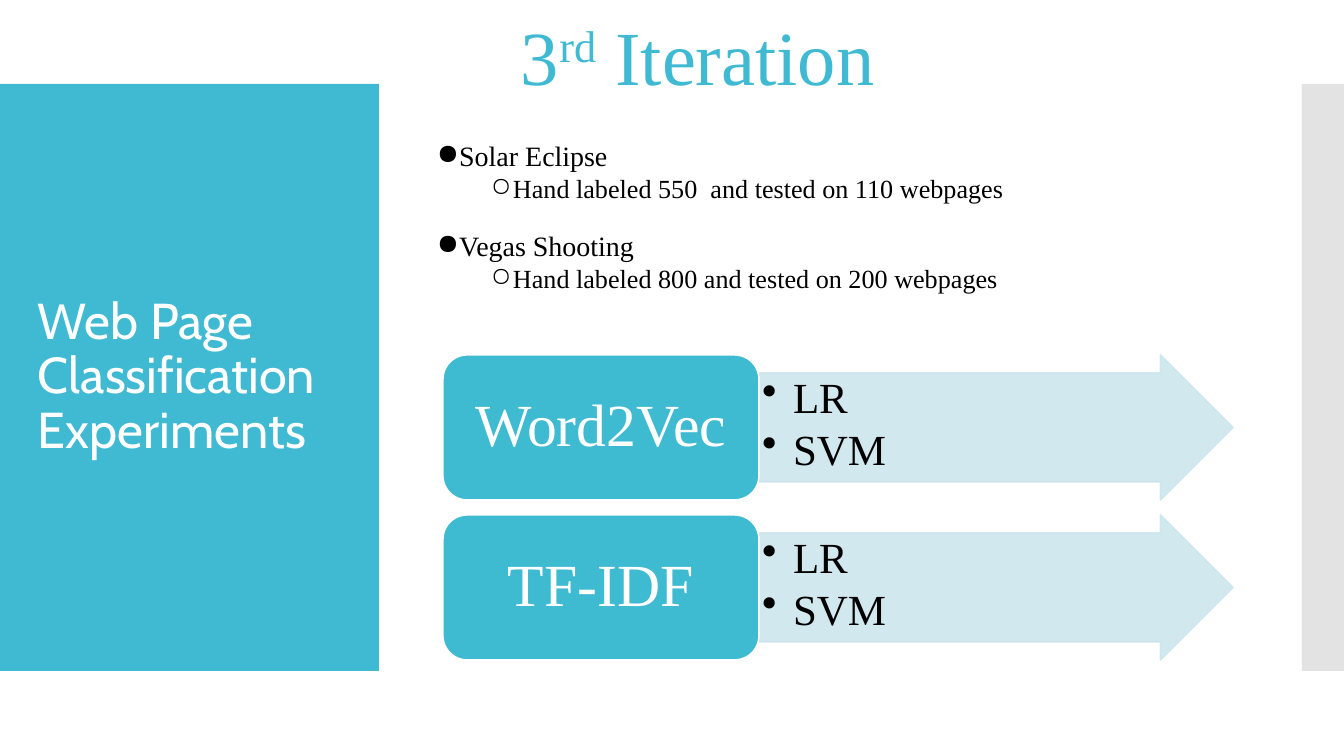
import lxml.etree
import pptx
import pptx.dml.color
import pptx.enum.shapes
import pptx.enum.text
import pptx.oxml.ns
import pptx.util

PIXEL = 914400 / 134.4  # EMU in one px
THEME = {
    "accent": "40BAD2", "label": "3EBAD1", "arrow": "CDE6ED", "strip": "C8C8C8",
    "white": "FFFFFF", "black": "000000",
    "sans": "Cabin", "serif": "Times New Roman",
    "heading": 41, "title": 27, "method": 32, "model": 23, "topic": 15, "detail": 14,
}
qn = pptx.oxml.ns.qn
Shape = pptx.enum.shapes.MSO_SHAPE
Align = pptx.enum.text.PP_ALIGN
Anchor = pptx.enum.text.MSO_ANCHOR


def add_box(slide, kind, place, fill=None, line=None, opacity=100):
    """Add a shape, or a text box when kind is None, placed in px."""
    lengths = [round(value * PIXEL) for value in place]
    if kind is None:
        return slide.shapes.add_textbox(*lengths)
    shape = slide.shapes.add_shape(kind, *lengths)
    shape.shadow.inherit = False
    shape.fill.solid()
    shape.fill.fore_color.rgb = pptx.dml.color.RGBColor.from_string(THEME[fill])
    if line:
        shape.line.color.rgb = pptx.dml.color.RGBColor.from_string(THEME[line])
        shape.line.width = pptx.util.Pt(0.85)
    else:
        shape.line.fill.background()
    if opacity < 100:
        for color in shape._element.spPr.iter(qn("a:srgbClr")):
            lxml.etree.SubElement(color, qn("a:alpha"), val=str(opacity * 1000))
    return shape


def write_text(shape, paragraphs, font, color, insets, anchor=Anchor.TOP):
    """Write (text, size, format values, bullet) paragraphs; insets are in px."""
    frame = shape.text_frame
    across, down = (round(value * PIXEL) for value in insets)
    frame_format = {
        "word_wrap": True, "vertical_anchor": anchor,
        "margin_left": across, "margin_right": across,
        "margin_top": down, "margin_bottom": down,
    }
    for name, value in frame_format.items():
        setattr(frame, name, value)
    for index, (text, size, values, bullet) in enumerate(paragraphs):
        paragraph = frame.add_paragraph() if index else frame.paragraphs[0]
        if bullet:
            symbol, left, hanging = bullet
            properties = paragraph._p.get_or_add_pPr()
            properties.set("marL", str(round(left * PIXEL)))
            properties.set("indent", str(round(-hanging * PIXEL)))
            bullet_color = lxml.etree.SubElement(properties, qn("a:buClr"))
            lxml.etree.SubElement(bullet_color, qn("a:srgbClr"), val=THEME[color])
            lxml.etree.SubElement(properties, qn("a:buChar"), char=symbol)
        paragraph_format = {"alignment": Align.LEFT, "line_spacing": 0.9, **values}
        for name, value in paragraph_format.items():
            setattr(paragraph, name, value)
        # A text is one string, or a list of (string, baseline shift) parts
        for part, shift in [(text, 0)] if isinstance(text, str) else text:
            run = paragraph.add_run()
            run.text = part
            font_format = {"name": THEME[font], "size": pptx.util.Pt(THEME[size])}
            for name, value in font_format.items():
                setattr(run.font, name, value)
            run.font.color.rgb = pptx.dml.color.RGBColor.from_string(THEME[color])
            if shift:
                run._r.get_or_add_rPr().set("baseline", str(shift * 1000))


presentation = pptx.Presentation()
presentation.slide_width = round(1344 * PIXEL)
presentation.slide_height = round(756 * PIXEL)
slide = presentation.slides.add_slide(presentation.slide_layouts[6])

# Side panel and right strip
add_box(slide, Shape.RECTANGLE, (0, 84, 379, 587), "accent")
add_box(slide, Shape.RECTANGLE, (1302, 84, 42, 587), "strip", opacity=50)

# Panel title
title = add_box(slide, None, (28, 124, 325, 507))
write_text(title, [("Web Page Classification Experiments", "title", {}, None)],
           "sans", "white", (10, 5), Anchor.MIDDLE)

# Heading
heading = add_box(slide, None, (431, 4, 534, 102))
write_text(heading, [([("3", 0), ("rd", 30), (" Iteration", 0)], "heading",
                      {"alignment": Align.CENTER, "line_spacing": 1.0}, None)],
           "serif", "accent", (10, 5))

# Data sets
topics = [
    ("Solar Eclipse", "Hand labeled 550  and tested on 110 webpages"),
    ("Vegas Shooting", "Hand labeled 800 and tested on 200 webpages"),
]
lines = []
for index, (topic, detail) in enumerate(topics):
    gap = {"space_before": pptx.util.Pt(15)} if index else {}
    lines.append((topic, "topic", gap, ("●", 20, 20)))
    lines.append((detail, "detail", {"level": 1, "space_before": pptx.util.Pt(2)},
                  ("○", 76, 22)))
data_sets = add_box(slide, None, (427, 137, 806, 168))
write_text(data_sets, lines, "serif", "black", (10, 5))

# Methods with their models
for row, method in enumerate(["Word2Vec", "TF-IDF"]):
    top = 355 + 160 * row
    arrow = add_box(slide, Shape.RIGHT_ARROW, (758, top, 475, 145),
                    "arrow", "arrow", opacity=90)
    arrow.adjustments[0] = 0.75
    models = [
        (model, "model", {"level": 1, "space_before": pptx.util.Pt(3 * index)},
         ("•", 32, 31))
        for index, model in enumerate(["LR", "SVM"])
    ]
    write_text(arrow, models, "serif", "black", (3, 3))
    label = add_box(slide, Shape.ROUNDED_RECTANGLE, (443, top, 316, 145), "label", "white")
    write_text(label, [(method, "method", {"alignment": Align.CENTER}, None)],
               "serif", "white", (17, 9), Anchor.MIDDLE)

presentation.save("out.pptx")
